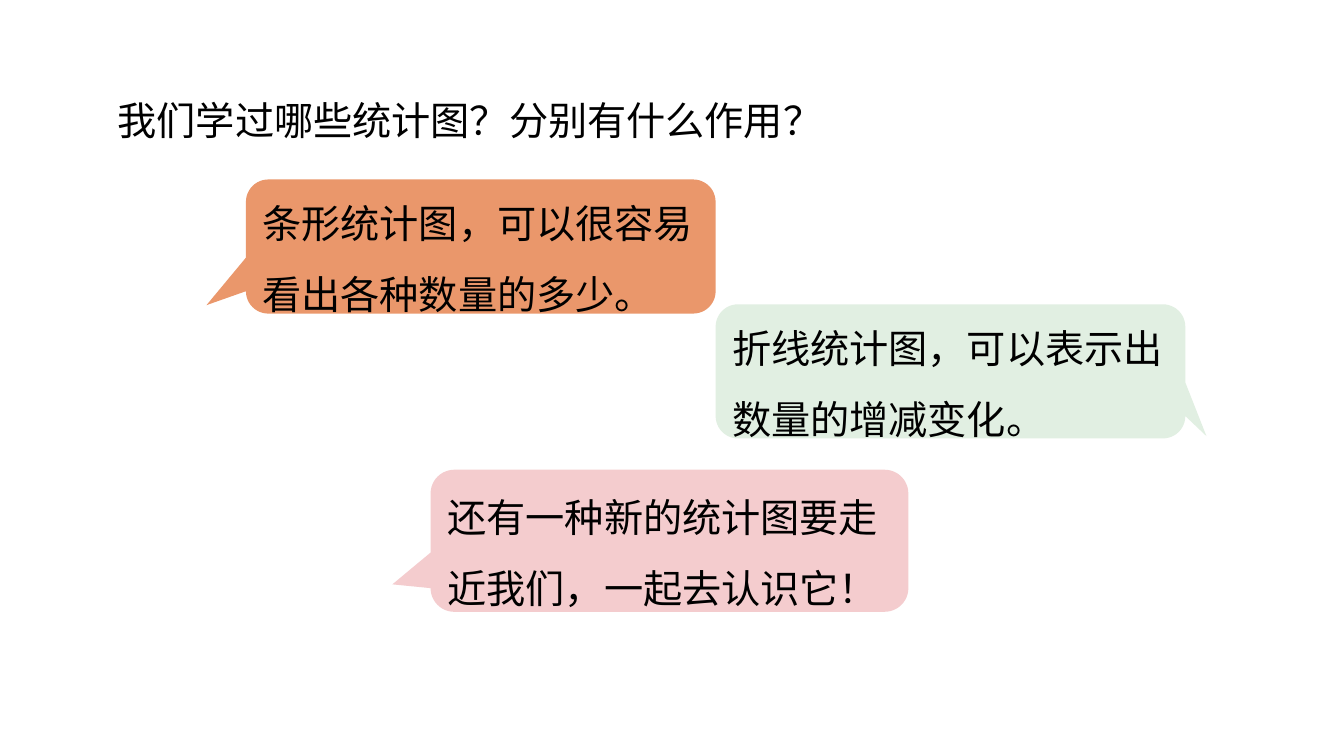
from dataclasses import dataclass

from lxml import etree
from pptx import Presentation
from pptx.dml.color import RGBColor
from pptx.enum.shapes import MSO_SHAPE
from pptx.enum.text import MSO_ANCHOR, MSO_AUTO_SIZE, PP_ALIGN
from pptx.oxml.ns import qn
from pptx.slide import Slide
from pptx.text.text import TextFrame
from pptx.util import Pt

CALLOUT = MSO_SHAPE.ROUNDED_RECTANGULAR_CALLOUT
MIDDLE = MSO_ANCHOR.MIDDLE
GROW = MSO_AUTO_SIZE.SHAPE_TO_FIT_TEXT
LEFT = PP_ALIGN.LEFT

FONT_NAME = "Noto Sans CJK SC"
FONT_SIZE = 28
CORNER = 0.167
COLORS = {
    "text": "000000",
    "orange": "EA976B",
    "green": "E1EFE2",
    "pink": "F4CCCE",
}


@dataclass(frozen=True)
class Bubble:
    """A speech bubble; the tip is relative to its centre, in widths and heights."""
    text: str
    color: str
    left: float
    top: float
    width: float
    height: float
    tip_x: float
    tip_y: float


BUBBLES = [
    Bubble("条形统计图，可以很容易看出各种数量的多少。", "orange",
           175.7, 128.2, 335.5, 95.8, -0.584, 0.437),
    Bubble("折线统计图，可以表示出数量的增减变化。", "green",
           511.2, 217.4, 335.5, 95.8, 0.545, 0.483),
    Bubble("还有一种新的统计图要走近我们，一起去认识它！", "pink",
           307.6, 335.5, 341.3, 101.5, -0.58, 0.307),
]


def write_text(frame: TextFrame, text: str, line_spacing: float) -> None:
    frame.word_wrap = True
    paragraph = frame.paragraphs[0]
    paragraph.text = text
    paragraph.alignment = LEFT
    paragraph.line_spacing = line_spacing
    font = paragraph.font
    font.size = Pt(FONT_SIZE)
    font.color.rgb = RGBColor.from_string(COLORS["text"])
    font.name = FONT_NAME
    # Chinese characters take the East Asian typeface
    properties = paragraph._p.pPr.find(qn("a:defRPr"))
    etree.SubElement(properties, qn("a:ea")).set("typeface", FONT_NAME)


def add_question(slide: Slide) -> None:
    box = slide.shapes.add_textbox(Pt(77), Pt(65.5), Pt(561), Pt(41))
    write_text(box.text_frame, "我们学过哪些统计图？分别有什么作用？", 1.0)
    box.text_frame.auto_size = GROW


def add_bubble(slide: Slide, bubble: Bubble) -> None:
    shape = slide.shapes.add_shape(
        CALLOUT, Pt(bubble.left), Pt(bubble.top), Pt(bubble.width), Pt(bubble.height))
    for index, value in enumerate((bubble.tip_x, bubble.tip_y, CORNER)):
        shape.adjustments[index] = value
    shape.shadow.inherit = False
    shape.fill.solid()
    shape.fill.fore_color.rgb = RGBColor.from_string(COLORS[bubble.color])
    shape.line.fill.background()
    shape.text_frame.vertical_anchor = MIDDLE
    write_text(shape.text_frame, bubble.text, 1.5)


def main() -> None:
    presentation = Presentation()
    presentation.slide_width = Pt(960)
    presentation.slide_height = Pt(540)
    slide = presentation.slides.add_slide(presentation.slide_layouts[6])
    add_question(slide)
    for bubble in BUBBLES:
        add_bubble(slide, bubble)
    presentation.save("out.pptx")


if __name__ == "__main__":
    main()
